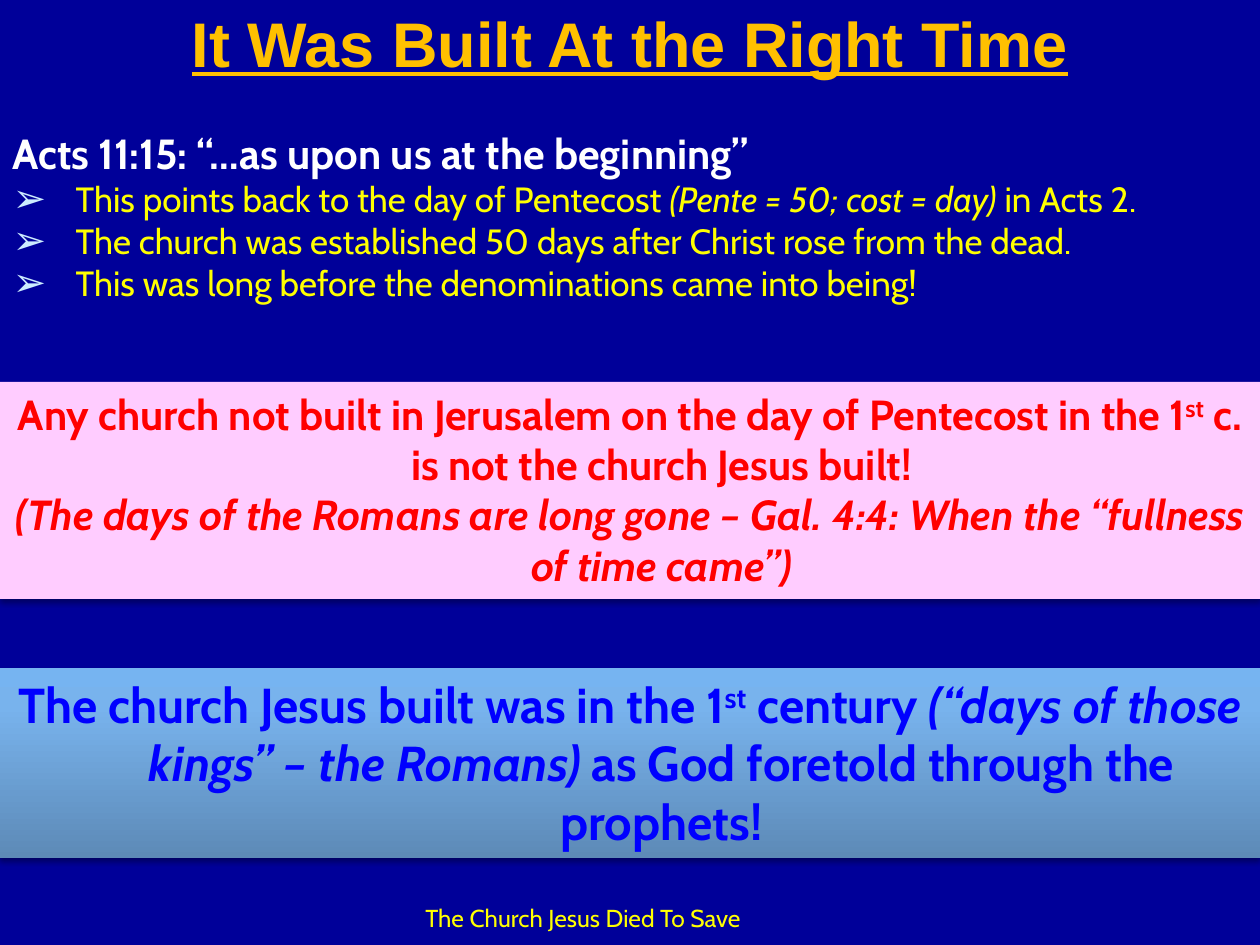
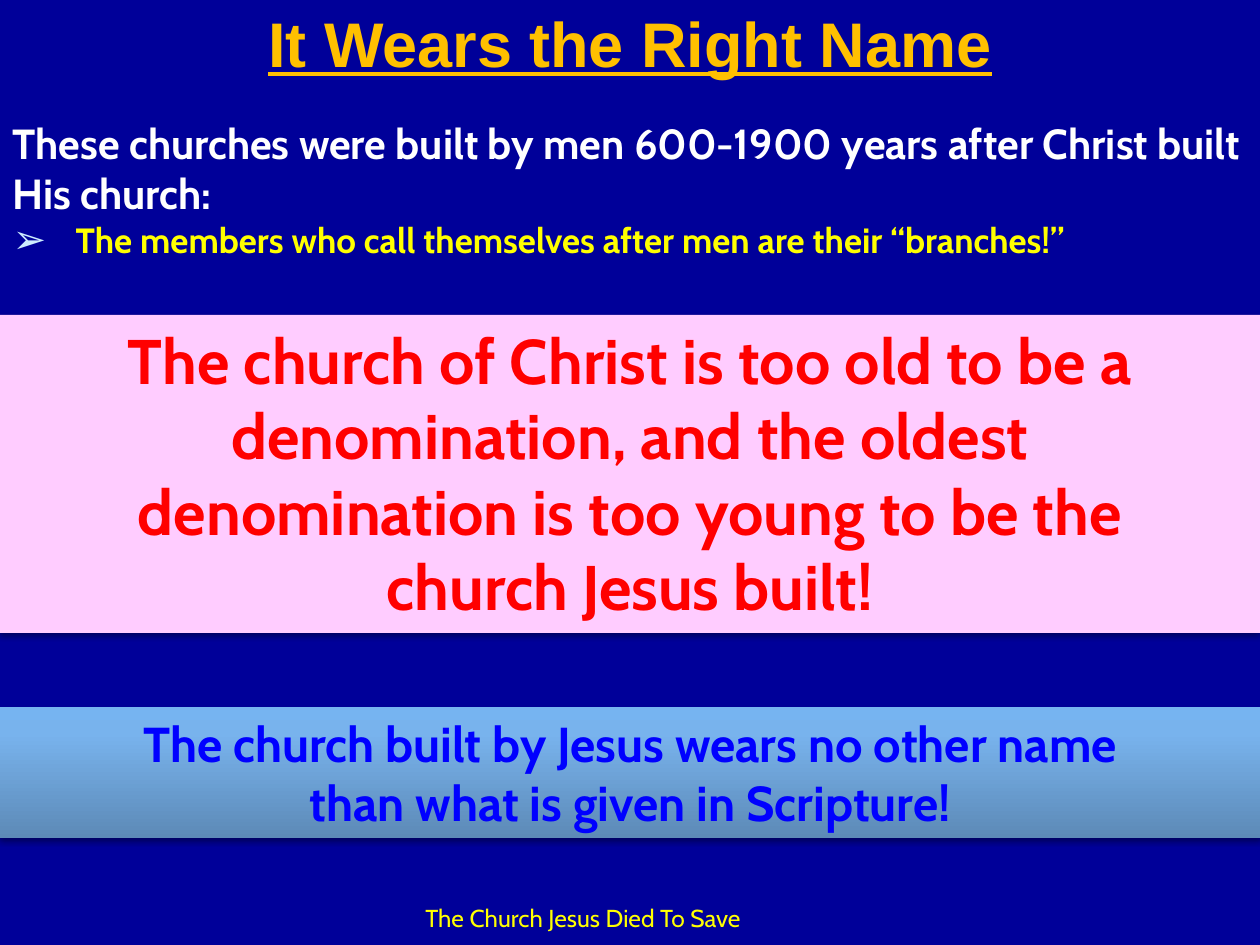
"""Build two slides about when the church was built and the name it wears."""
from copy import deepcopy

from lxml import etree
from pptx import Presentation
from pptx.dml.color import RGBColor
from pptx.enum.shapes import MSO_SHAPE
from pptx.enum.text import MSO_ANCHOR, MSO_AUTO_SIZE, PP_ALIGN
from pptx.oxml.ns import qn
from pptx.util import Pt

RECT = MSO_SHAPE.RECTANGLE
TOP, MIDDLE = MSO_ANCHOR.TOP, MSO_ANCHOR.MIDDLE
LEFT, CENTER = PP_ALIGN.LEFT, PP_ALIGN.CENTER
FIXED = MSO_AUTO_SIZE.NONE

NAVY = RGBColor(0x00, 0x00, 0x99)
GOLD = RGBColor(0xFF, 0xC0, 0x00)
WHITE = RGBColor(0xFF, 0xFF, 0xFF)
YELLOW = RGBColor(0xFF, 0xFF, 0x00)
PALE = RGBColor(0xCC, 0xEC, 0xFF)
PINK = RGBColor(0xFF, 0xCC, 0xFF)
RED = RGBColor(0xFF, 0x00, 0x00)
BLUE = RGBColor(0x00, 0x00, 0xFF)
BLACK = RGBColor(0x00, 0x00, 0x00)
SKY = [
    (0, RGBColor(0x5D, 0x8A, 0xB7)),
    (0.8, RGBColor(0x78, 0xB3, 0xED)),
    (1, RGBColor(0x76, 0xB4, 0xF1)),
]

PX = 914400 / 126
WIDE, HIGH = 1260, 945
TITLE = (0, 0, WIDE, 84)
FOOT = (284, 897, 598, 48)
HANG = 63
FONT = "Cabin"
FOOTER = "The Church Jesus Died To Save"

# Each paragraph is a list of (text, marks): b bold, i italic, s superscript.
SLIDES = [
    {
        "title": "It Was Built At the Right Time",
        "list": (121, 190),
        "head": [("Acts 11:15: “…as upon us at the beginning”", "b")],
        "points": [
            [("This points back to the day of Pentecost ", ""),
             ("(Pente = 50; cost = day)", "i"),
             (" in Acts 2.", "")],
            [("The church was established 50 days after Christ rose from the dead.", "")],
            [("This was long before the denominations came into being!", "")],
        ],
        "pink": (382, 217, 24, [
            [("Any church not built in Jerusalem on the day of Pentecost in the 1", "b"),
             ("st", "bs"),
             (" c. is not the church Jesus built!", "b")],
            [("(The days of the Romans are long gone – Gal. 4:4: "
              "When the “fullness of time came”)", "bi")],
        ]),
        "sky": (668, 190, 28, [
            [("The church Jesus built was in the 1", "b"),
             ("st", "bs"),
             (" century ", "b"),
             ("(“days of those kings” – the Romans) ", "bi"),
             ("as God foretold through the prophets!", "b")],
        ]),
    },
    {
        "title": "It Wears the Right Name",
        "list": (111, 158),
        "head": [("These churches were built by men 600-1900 years "
                  "after Christ built His church:", "b")],
        "points": [
            [("The members who call themselves after men are their “branches!”", "b")],
        ],
        "pink": (315, 318, 36, [
            [("The church of Christ is too old to be a", "b")],
            [("denomination, and the oldest", "b")],
            [("denomination is too young to be the", "b")],
            [("church Jesus built!", "b")],
        ]),
        "sky": (707, 131, 28, [
            [("The church built by Jesus wears no other name", "b")],
            [("than what is given in Scripture!", "b")],
        ]),
    },
]


def px(num):
    return round(num * PX)


def place(shape, box):
    shape.left, shape.top, shape.width, shape.height = map(px, box)


def setup(frame, anchor):
    frame.word_wrap = True
    frame.auto_size = FIXED
    frame.vertical_anchor = anchor
    return frame


def node(root, tag, **attrs):
    return etree.SubElement(root, qn(tag), attrs)


def indent(para, size):
    props = para._p.get_or_add_pPr()
    props.set("marL", str(px(size)))
    props.set("indent", str(-px(size)))
    return props


def bullet(para):
    props = indent(para, HANG)
    node(node(props, "a:buClr"), "a:srgbClr", val=str(PALE))
    node(props, "a:buSzPct", val="115000")
    node(props, "a:buChar", char="➢")


def plain(para):
    node(indent(para, 0), "a:buNone")


def hang(para):
    indent(para, HANG)


def write(frame, paras, size, color, align=CENTER, form=None, font=FONT, first=True):
    for num, runs in enumerate(paras):
        para = frame.paragraphs[0] if first and num == 0 else frame.add_paragraph()
        if form:
            form(para)
        para.alignment = align
        para.space_before = Pt(0)
        for text, marks in runs:
            run = para.add_run()
            run.text = text
            face = run.font
            face.name, face.size = font, Pt(size)
            face.bold, face.italic = "b" in marks, "i" in marks
            face.underline = "u" in marks
            face.color.rgb = color
            if "s" in marks:
                face._element.set("baseline", "30000")


def shade(shape):
    shape.shadow.inherit = False
    glow = shape._element.spPr.find(qn("a:effectLst"))
    cast = node(glow, "a:outerShdw", blurRad=str(Pt(3.1)), dist=str(Pt(1.8)),
                dir="5400000", rotWithShape="0")
    node(node(cast, "a:srgbClr", val=str(BLACK)), "a:alpha", val="35000")


def blend(fill, stops):
    fill.gradient()
    fill.gradient_angle = 90
    last = fill._xPr.find(".//" + qn("a:gs"))
    last.addnext(deepcopy(last))
    for stop, (spot, color) in zip(fill.gradient_stops, stops):
        stop.position = spot
        stop.color.rgb = color


def band(slide, top, high, size, paras, color):
    shape = slide.shapes.add_shape(RECT, *map(px, (0, top, WIDE, high)))
    shape.line.fill.background()
    shade(shape)
    write(setup(shape.text_frame, TOP), paras, size, color, form=hang)
    return shape.fill


def build(deck, data):
    slide = deck.slides.add_slide(deck.slide_layouts[1])
    back = slide.background.fill
    back.solid()
    back.fore_color.rgb = NAVY

    title, body = slide.placeholders
    place(title, TITLE)
    write(setup(title.text_frame, MIDDLE), [[(data["title"], "bu")]], 36, GOLD,
          font="Arial")

    foot = slide.shapes.add_textbox(*map(px, FOOT))
    write(setup(foot.text_frame, TOP), [[(FOOTER, "")]], 14, YELLOW)

    top, high = data["list"]
    place(body, (0, top, WIDE, high))
    frame = setup(body.text_frame, TOP)
    write(frame, [data["head"]], 24, WHITE, LEFT, plain)
    write(frame, data["points"], 20, YELLOW, LEFT, bullet, first=False)

    fill = band(slide, *data["pink"], RED)
    fill.solid()
    fill.fore_color.rgb = PINK
    blend(band(slide, *data["sky"], BLUE), SKY)


def main():
    deck = Presentation()
    deck.slide_width, deck.slide_height = px(WIDE), px(HIGH)
    for data in SLIDES:
        build(deck, data)
    deck.save("out.pptx")


if __name__ == "__main__":
    main()
